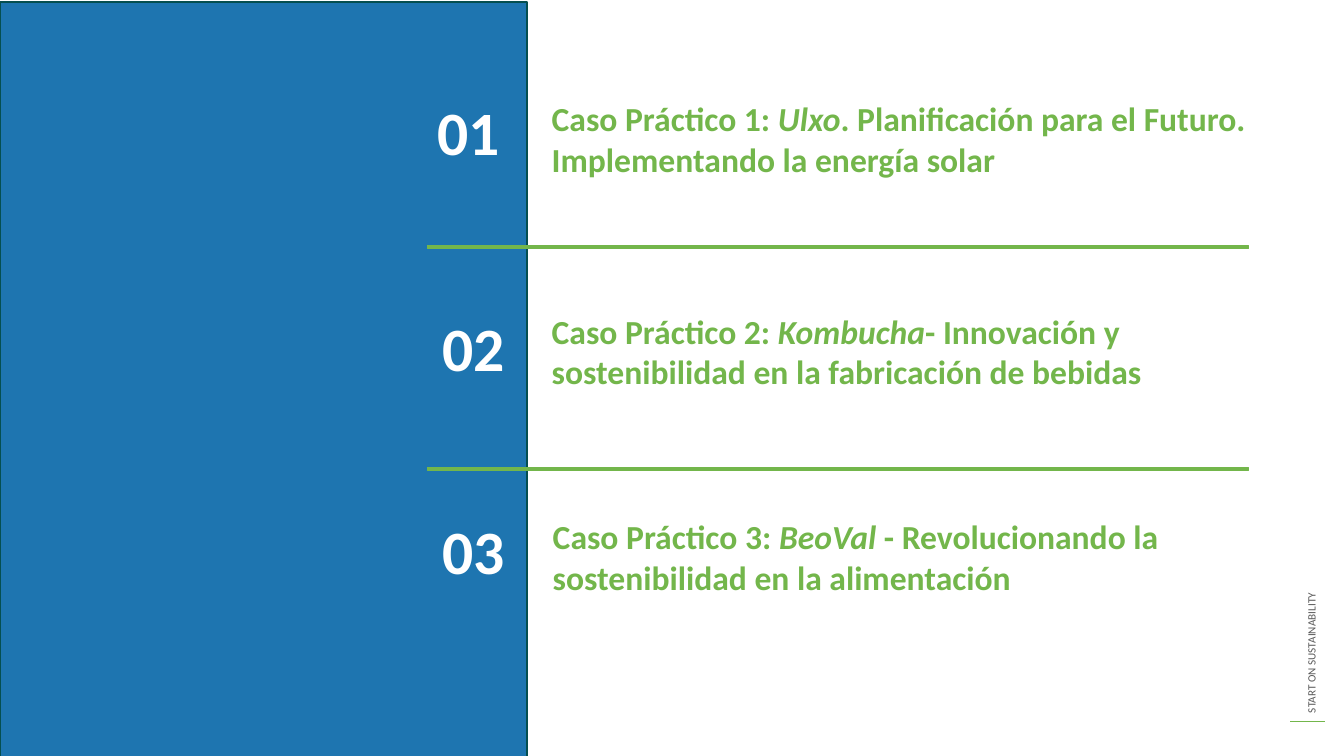
from dataclasses import dataclass

from lxml.etree import SubElement
from pptx import Presentation
from pptx.dml.color import RGBColor
from pptx.enum.shapes import MSO_CONNECTOR as Connector, MSO_SHAPE as Shape
from pptx.enum.text import MSO_ANCHOR as Anchor, PP_ALIGN as Align
from pptx.oxml.ns import qn
from pptx.util import Emu, Pt

EMU_PER_PX = 9525


@dataclass(frozen=True)
class Theme:
    font: str = "Calibri"
    blue: str = "1E75B0"
    green: str = "73B64B"
    dark_teal: str = "054F50"
    grey: str = "595959"
    white: str = "FFFFFF"
    number_size: int = 44
    case_size: int = 24
    footer_size: int = 8
    line_width: int = 1


def px(value):
    return Emu(value * EMU_PER_PX)


def add_run(paragraph, text, *, font, size, color, bold=False, italic=False):
    run = paragraph.add_run()
    run.text = text
    run.font.name = font
    run.font.size = Pt(size)
    run.font.bold = bold
    run.font.italic = italic
    run.font.color.rgb = RGBColor.from_string(color)


class SlideBuilder:
    def __init__(self, slide, theme):
        self.slide = slide
        self.theme = theme

    def rectangle(self, left, top, width, height, fill, outline):
        shape = self.slide.shapes.add_shape(
            Shape.RECTANGLE, px(left), px(top), px(width), px(height)
        )
        shape.shadow.inherit = False
        shape.fill.solid()
        shape.fill.fore_color.rgb = RGBColor.from_string(fill)
        shape.line.color.rgb = RGBColor.from_string(outline)
        shape.line.width = Pt(self.theme.line_width)

    def line(self, left, right, y, color):
        connector = self.slide.shapes.add_connector(
            Connector.STRAIGHT, px(left), px(y), px(right), px(y)
        )
        connector.line.color.rgb = RGBColor.from_string(color)
        connector.line.width = Pt(self.theme.line_width)
        SubElement(connector._element.spPr, qn("a:effectLst"))

    def text(self, left, top, width, height, pieces, *, size, color,
             bold=False, spacing=1.0, rotation=0):
        box = self.slide.shapes.add_textbox(px(left), px(top), px(width), px(height))
        box.rotation = rotation
        frame = box.text_frame
        frame.word_wrap = True
        frame.vertical_anchor = Anchor.TOP
        paragraph = frame.paragraphs[0]
        paragraph.alignment = Align.LEFT
        paragraph.line_spacing = spacing
        for text, italic in pieces:
            add_run(paragraph, text, font=self.theme.font, size=size,
                    color=color, bold=bold, italic=italic)

    def case(self, number, name, subject, number_left, number_top, left, top):
        theme = self.theme
        self.text(number_left, number_top, 130, 101, [(f"{number:02}", False)],
                  size=theme.number_size, color=theme.white, bold=True, spacing=1.3)
        pieces = [(f"Caso Práctico {number}: ", False), (name, True), (subject, False)]
        self.text(left, top, 689, 100, pieces,
                  size=theme.case_size, color=theme.green, bold=True)


CASES = [
    ("Ulxo", ". Planificación para el Futuro. Implementando la energía solar",
     407, 64, 516, 89),
    ("Kombucha", "- Innovación y sostenibilidad en la fabricación de bebidas",
     412, 269, 516, 291),
    ("BeoVal", " - Revolucionando la sostenibilidad en la alimentación",
     412, 463, 517, 487),
]


def main():
    theme = Theme()
    presentation = Presentation()
    presentation.slide_width, presentation.slide_height = px(1280), px(720)
    slide = presentation.slides.add_slide(presentation.slide_layouts[6])
    builder = SlideBuilder(slide, theme)

    builder.text(1035, 463, 428, 23, [("START ON SUSTAINABILITY", False)],
                 size=theme.footer_size, color=theme.grey, rotation=270)
    builder.line(1229, 1262, 687, theme.green)
    builder.rectangle(0, 2, 502, 720, theme.blue, theme.dark_teal)
    for number, case in enumerate(CASES, start=1):
        builder.case(number, *case)
    for divider_top in (234, 445):
        builder.rectangle(407, divider_top, 782, 3, theme.green, theme.green)

    presentation.save("out.pptx")


if __name__ == "__main__":
    main()
